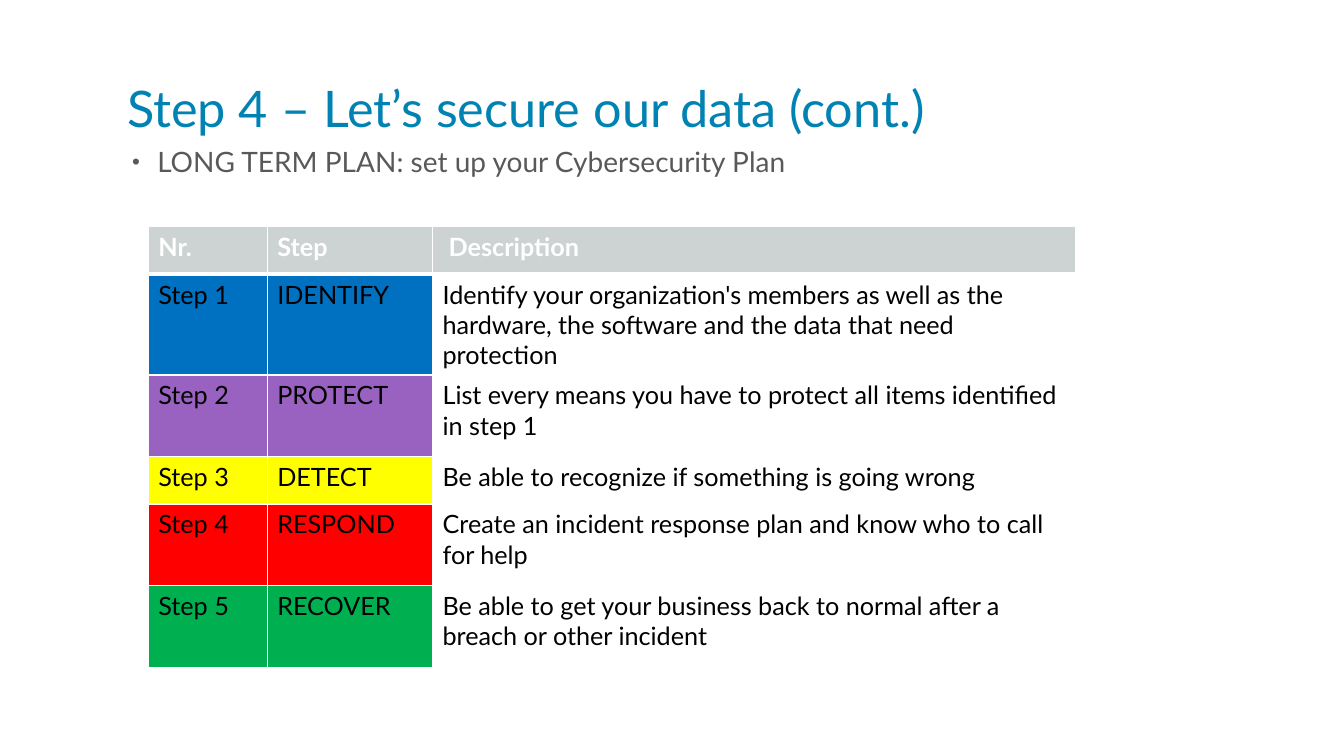
from lxml import etree
from pptx import Presentation
from pptx.dml.color import RGBColor
from pptx.enum.text import MSO_ANCHOR, MSO_AUTO_SIZE, PP_ALIGN
from pptx.oxml.ns import qn
from pptx.util import Inches, Pt

TOP, BOTTOM = MSO_ANCHOR.TOP, MSO_ANCHOR.BOTTOM
NO_FIT = MSO_AUTO_SIZE.NONE
LEFT = PP_ALIGN.LEFT

FONT = "Lato"
TEAL = RGBColor(0x00, 0x83, 0xB3)
GRAY = RGBColor(0x59, 0x59, 0x59)
SILVER = RGBColor(0xCD, 0xD2, 0xD2)
WHITE = RGBColor(0xFF, 0xFF, 0xFF)
BLACK = RGBColor(0x00, 0x00, 0x00)
BLUE = RGBColor(0x00, 0x70, 0xC0)
PURPLE = RGBColor(0x99, 0x62, 0xC1)
YELLOW = RGBColor(0xFF, 0xFF, 0x00)
RED = RGBColor(0xFF, 0x00, 0x00)
GREEN = RGBColor(0x00, 0xB0, 0x50)

HEADS = ["Nr.", "Step", "Description"]
STEPS = [
    ("IDENTIFY", BLUE, 0.81,
     "Identify your organization's members as well as the hardware, "
     "the software and the data that need protection"),
    ("PROTECT", PURPLE, 0.81,
     "List every means you have to protect all items identified in step 1"),
    ("DETECT", YELLOW, 0.47,
     "Be able to recognize if something is going wrong"),
    ("RESPOND", RED, 0.81,
     "Create an incident response plan and know who to call for help"),
    ("RECOVER", GREEN, 0.81,
     "Be able to get your business back to normal after a breach "
     "or other incident"),
]
WIDTHS = [1.18, 1.64, 6.38]
HEAD_HIGH = 0.47


def put_text(frame, text, size=18, color=BLACK, bold=False, space=1.0):
    """Write one formatted paragraph and return it."""
    para = frame.paragraphs[0]
    para.alignment = LEFT
    para.line_spacing = space
    para.space_before = Pt(0)
    run = para.add_run()
    run.text = text
    font = run.font
    font.name, font.size, font.bold = FONT, Pt(size), bold
    font.color.rgb = color
    return para


def place(holder, left, top, width, height, anchor):
    """Move a placeholder and return its text frame."""
    holder.left, holder.top = Inches(left), Inches(top)
    holder.width, holder.height = Inches(width), Inches(height)
    frame = holder.text_frame
    frame.word_wrap = True
    frame.auto_size = NO_FIT
    frame.vertical_anchor = anchor
    return frame


def add_bullet(para, color):
    """Give a paragraph a hanging round bullet."""
    props = para._p.get_or_add_pPr()
    props.set("marL", str(Inches(0.3)))
    props.set("indent", str(Inches(-0.25)))
    tint = etree.SubElement(props, qn("a:buClr"))
    etree.SubElement(tint, qn("a:srgbClr"), val=str(color))
    etree.SubElement(props, qn("a:buSzPct"), val="80000")
    etree.SubElement(props, qn("a:buFont"), typeface="Arial")
    etree.SubElement(props, qn("a:buChar"), char="•")


def set_edges(cell, top=1, bottom=1):
    """Draw white cell borders, with widths in points."""
    props = cell._tc.get_or_add_tcPr()
    edges = {"lnL": 1, "lnR": 1, "lnT": top, "lnB": bottom}
    for spot, (side, width) in enumerate(edges.items()):
        line = etree.Element(qn("a:" + side), w=str(Pt(width)))
        fill = etree.SubElement(line, qn("a:solidFill"))
        etree.SubElement(fill, qn("a:srgbClr"), val=str(WHITE))
        props.insert(spot, line)


def fill_cell(cell, text, fill, top=1, bottom=1, **style):
    cell.fill.solid()
    cell.fill.fore_color.rgb = fill
    set_edges(cell, top, bottom)
    put_text(cell.text_frame, text, **style)


def add_steps(slide):
    """Build the table of plan steps."""
    highs = [HEAD_HIGH] + [step[2] for step in STEPS]
    table = slide.shapes.add_table(
        len(highs), len(WIDTHS), Inches(1.47), Inches(2.25),
        Inches(sum(WIDTHS)), Inches(sum(highs))).table
    for col, width in zip(table.columns, WIDTHS):
        col.width = Inches(width)
    for row, high in zip(table.rows, highs):
        row.height = Inches(high)

    # Header row
    for col, head in enumerate(HEADS):
        fill_cell(table.cell(0, col), head, SILVER, bottom=3,
                  color=WHITE, bold=True)
    table.cell(0, 2).margin_left = Inches(0.16)

    # Step rows
    for row, (name, color, _, about) in enumerate(STEPS, 1):
        top = 3 if row == 1 else 1
        texts = [f"Step {row}", name, about]
        for col, (text, fill) in enumerate(zip(texts, [color, color, WHITE])):
            fill_cell(table.cell(row, col), text, fill, top=top)


def main():
    deck = Presentation()
    deck.slide_width, deck.slide_height = Inches(13.33), Inches(7.5)
    slide = deck.slides.add_slide(deck.slide_layouts[1])

    # Title and lead line
    title = place(slide.shapes.title, 1.16, 0.58, 9.5, 0.83, BOTTOM)
    put_text(title, "Step 4 – Let’s secure our data (cont.)",
             size=36, color=TEAL, space=0.8)
    body = place(slide.placeholders[1], 1.16, 1.42, 9.5, 4.58, TOP)
    lead = put_text(body, "LONG TERM PLAN: set up your Cybersecurity Plan",
                    size=20, color=GRAY, space=0.9)
    add_bullet(lead, GRAY)

    # Plan table
    add_steps(slide)
    deck.save("out.pptx")


if __name__ == "__main__":
    main()
